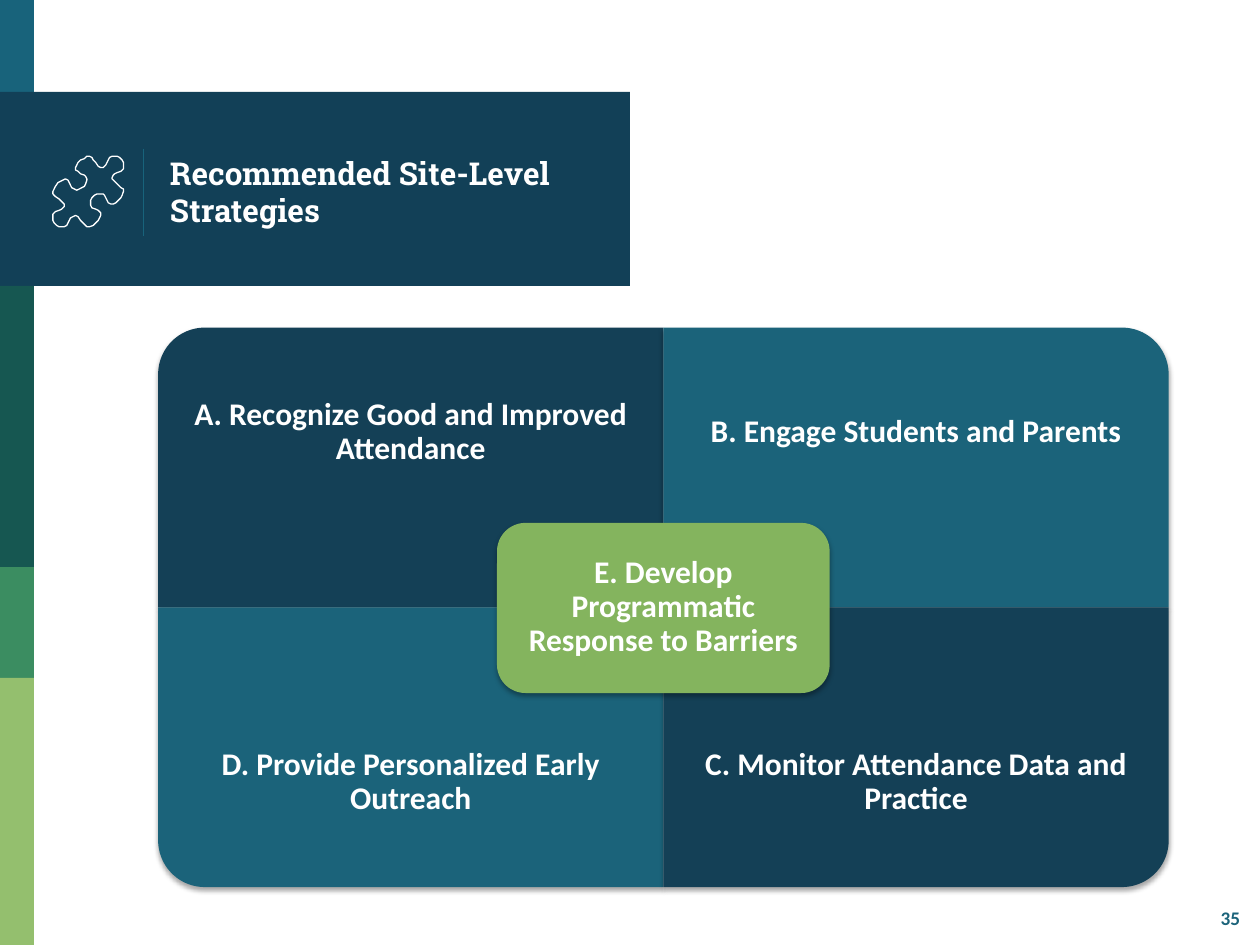
import pptx
import pptx.util
import pptx.dml.color
import pptx.enum.shapes
import pptx.enum.text
import pptx.oxml
import pptx.oxml.ns

KIND = pptx.enum.shapes.MSO_SHAPE
ALIGN = pptx.enum.text.PP_ALIGN
NAVY, TEAL, WHITE = "144056", "1B637A", "FFFFFF"
COLS, ROWS = 100, 75  # grid cells across and down the slide


def tint(code):
    return pptx.dml.color.RGBColor.from_string(code)


def effects(shape, body=""):
    """Set the effect list of a shape; an empty one removes the shadow."""
    space = pptx.oxml.ns.nsdecls("a")
    node = pptx.oxml.parse_xml(f"<a:effectLst {space}>{body}</a:effectLst>")
    shape._element.spPr.append(node)


class Deck:
    body, head, size = "Calibri", "Roboto Slab", 18
    shade = ('<a:outerShdw blurRad="39370" dist="22860" dir="5400000" '
             'rotWithShape="0"><a:srgbClr val="000000">'
             '<a:alpha val="35000"/></a:srgbClr></a:outerShdw>')

    def __init__(self):
        self.file = pptx.Presentation()
        self.file.slide_width = pptx.util.Inches(10)
        self.file.slide_height = pptx.util.Inches(7.5)
        self.slide = self.file.slides.add_slide(self.file.slide_layouts[6])

    def x(self, cols):
        return round(self.file.slide_width * cols / COLS)

    def y(self, rows):
        return round(self.file.slide_height * rows / ROWS)

    def place(self, left, top, wide, high):
        return self.x(left), self.y(top), self.x(wide), self.y(high)

    def block(self, kind, box, fill, turn=0, shade=False):
        """Draw a filled shape that covers box after it is turned."""
        left, top, wide, high = box
        if turn % 180:
            left, top = left + (wide - high) / 2, top + (high - wide) / 2
            wide, high = high, wide
        shape = self.slide.shapes.add_shape(
            kind, *self.place(left, top, wide, high))
        shape.rotation = turn
        shape.fill.solid()
        shape.fill.fore_color.rgb = tint(fill)
        shape.line.fill.background()
        if shade:
            effects(shape, self.shade)
        else:
            shape.shadow.inherit = False

    def text(self, box, words, font=body, size=size, color=WHITE,
             align=ALIGN.LEFT, gap=1, inset=1, wrap=True, middle=True):
        frame = self.slide.shapes.add_textbox(*self.place(*box)).text_frame
        frame.word_wrap = wrap
        anchor = pptx.enum.text.MSO_ANCHOR
        frame.vertical_anchor = anchor.MIDDLE if middle else anchor.TOP
        frame.margin_left = frame.margin_right = self.x(inset)
        frame.margin_top = frame.margin_bottom = self.y(inset)
        para = frame.paragraphs[0]
        para.alignment, para.line_spacing = align, gap
        run = para.add_run()
        run.text = words
        run.font.name, run.font.size = font, pptx.util.Pt(size)
        run.font.bold, run.font.color.rgb = True, tint(color)

    def label(self, box, words, inset):
        self.text(box, words, align=ALIGN.CENTER, gap=0.9, inset=inset)

    def rule(self, col, top, end, color):
        line = self.slide.shapes.add_connector(
            pptx.enum.shapes.MSO_CONNECTOR.STRAIGHT,
            self.x(col), self.y(top), self.x(col), self.y(end))
        line.line.color.rgb, line.line.width = tint(color), pptx.util.Pt(0.75)
        effects(line)

    def outline(self, dots, color):
        """Draw a closed outline; dots are in tenths of a grid cell."""
        pen = self.slide.shapes.build_freeform(
            *dots[0], scale=self.x(1) / 10)
        pen.add_line_segments(dots[1:], close=True)
        shape = pen.convert_to_shape()
        shape.fill.background()
        shape.line.color.rgb = tint(color)
        shape.line.width = pptx.util.Pt(0.75)
        shape.shadow.inherit = False


# Puzzle piece, all round and back to its start
PUZZLE = [
    (91, 138), (93, 137), (96, 136), (98, 134), (98, 132), (98, 129),
    (97, 127), (95, 125), (93, 124), (91, 124), (89, 124), (87, 125),
    (86, 127), (85, 129), (84, 131), (82, 133), (80, 133), (78, 132),
    (76, 129), (74, 127), (73, 125), (71, 124), (69, 124), (67, 126),
    (64, 127), (62, 129), (61, 131), (60, 133), (60, 135), (62, 136),
    (64, 138), (67, 139), (68, 140), (69, 142), (69, 143), (68, 146),
    (67, 148), (65, 149), (63, 150), (61, 151), (59, 150), (57, 149),
    (56, 147), (55, 145), (54, 143), (52, 142), (50, 143), (48, 144),
    (46, 145), (44, 148), (43, 150), (42, 152), (42, 154), (44, 156),
    (47, 158), (49, 160), (51, 162), (51, 164), (49, 166), (47, 167),
    (44, 168), (42, 170), (42, 172), (42, 175), (43, 177), (45, 179),
    (47, 180), (49, 180), (51, 180), (53, 179), (54, 177), (55, 175),
    (56, 173), (58, 172), (60, 171), (62, 172), (64, 175), (66, 177),
    (68, 179), (69, 180), (71, 180), (74, 179), (76, 177), (78, 175),
    (79, 173), (80, 171), (80, 169), (78, 167), (76, 166), (73, 165),
    (72, 163), (72, 161), (72, 159), (73, 157), (75, 155), (77, 154),
    (79, 154), (82, 154), (83, 155), (84, 157), (85, 159), (86, 161),
    (88, 162), (90, 162), (92, 161), (94, 159), (96, 157), (97, 155),
    (98, 152), (98, 150), (96, 149), (93, 146), (91, 144), (89, 142),
    (89, 141), (90, 139)]


def main():
    deck = Deck()

    # Side bands, stacked from top to foot, and the title banner
    edges = [0, 7.3, 22.7, 45, 53.8, 75]
    bands = ["18637B", "124057", "165751", "3B8D61", "94BF6E"]
    for i, fill in enumerate(bands):
        wide = 50 if i == 1 else 2.7
        high = edges[i + 1] - edges[i]
        deck.block(KIND.RECTANGLE, (0, edges[i], wide, high), fill)

    # Title and slide number
    deck.rule(11.4, 11.8, 18.7, "18637B")
    deck.text((12.5, 7.7, 35.1, 15), "Recommended Site-Level Strategies",
              font=deck.head)
    deck.text((95.9, 71, 5, 2.9), "35", size=11, color=TEAL,
              wrap=False, middle=False)

    # Four quarters: column, row, turn, fill, words
    left, top, wide, high = 12.55, 26, 40.1, 22.2
    quarters = [
        (0, 0, 270, NAVY, "A. Recognize Good and Improved Attendance"),
        (1, 0, 0, TEAL, "B. Engage Students and Parents"),
        (0, 1, 180, TEAL, "D. Provide Personalized Early Outreach"),
        (1, 1, 90, NAVY, "C. Monitor Attendance Data and Practice")]
    for col, row, turn, fill, words in quarters:
        x, y = left + col * wide, top + row * high
        deck.block(KIND.ROUND_1_RECTANGLE, (x, y, wide, high), fill, turn,
                   shade=True)
        deck.label((x, y + row * high / 4, wide, high * 3 / 4), words, 1.4)

    # Centre card
    deck.block(KIND.ROUNDED_RECTANGLE, (39.45, 41.5, 26.4, 13.5), "84B45E",
               shade=True)
    deck.label((40.1, 42.1, 25.1, 12.2),
               "E. Develop Programmatic Response to Barriers", 0.7)

    # Puzzle icon
    deck.outline(PUZZLE, WHITE)
    deck.file.save("out.pptx")


if __name__ == "__main__":
    main()
